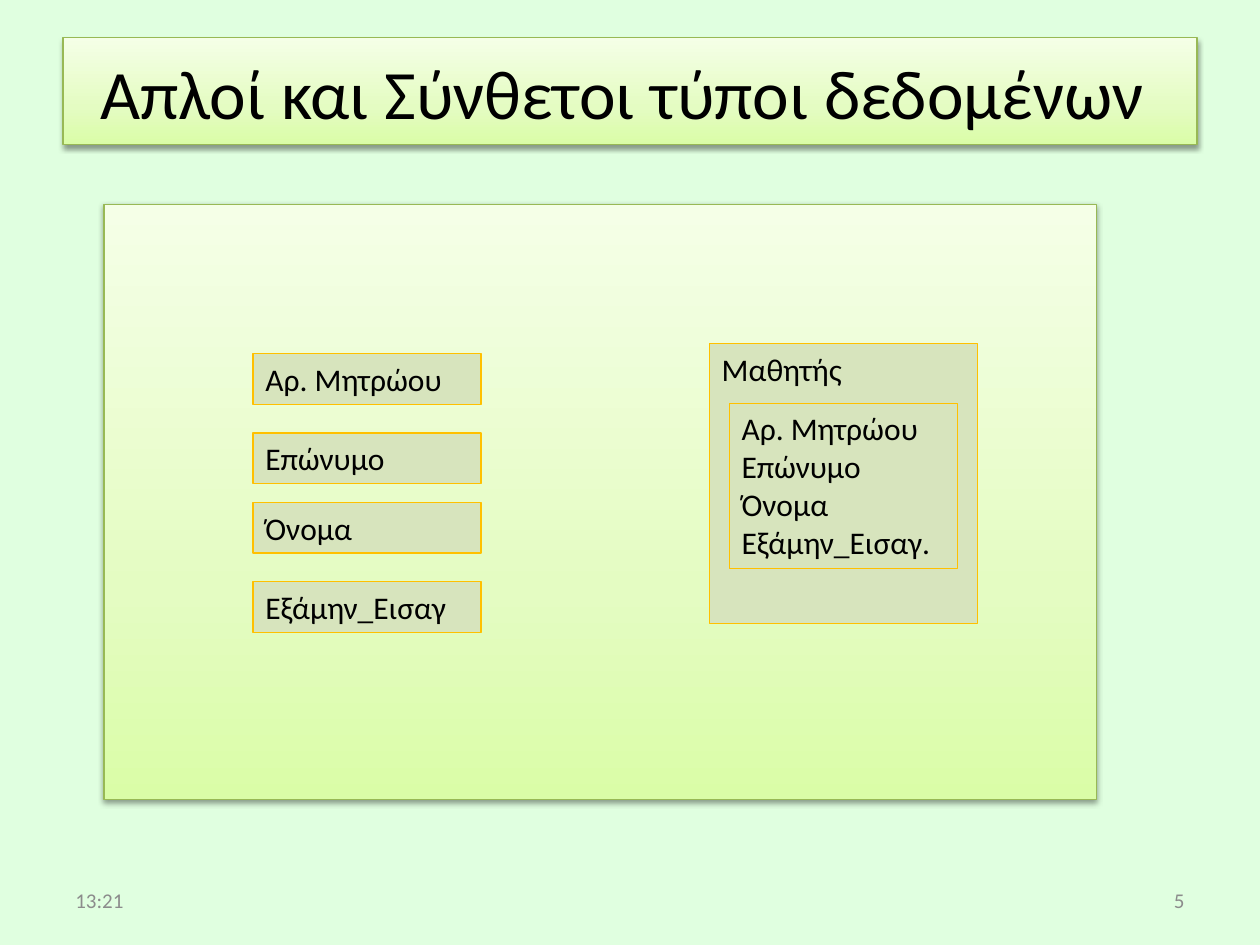
from copy import deepcopy

from pptx import Presentation
from pptx.dml.color import RGBColor
from pptx.enum.shapes import MSO_SHAPE
from pptx.enum.text import MSO_ANCHOR, MSO_AUTO_SIZE, PP_ALIGN
from pptx.oxml import parse_xml
from pptx.oxml.ns import nsdecls, qn
from pptx.util import Cm, Pt

RECTANGLE = MSO_SHAPE.RECTANGLE
TOP, MIDDLE = MSO_ANCHOR.TOP, MSO_ANCHOR.MIDDLE
LEFT, CENTER, RIGHT = PP_ALIGN.LEFT, PP_ALIGN.CENTER, PP_ALIGN.RIGHT
NO_AUTOSIZE = MSO_AUTO_SIZE.NONE
TITLE_ONLY = 5


def color(value):
    return RGBColor.from_string(value)


class SlideBuilder:
    font = "Calibri"
    ink = "000000"
    muted = "8C8C8C"
    background = "E0FFE0"
    field_fill = "D7E4BD"
    field_line = "FFC000"
    panel_line = "98B955"
    panel_stops = [(0, "DAFDA7"), (0.35, "E4FCC2"), (1, "F5FFE7")]

    def __init__(self, deck):
        self.page = deck.slides.add_slide(deck.slide_layouts[TITLE_ONLY])
        fill = self.page.background.fill
        fill.solid()
        fill.fore_color.rgb = color(self.background)

    def set_text(self, box, lines, size, ink, align=LEFT, anchor=TOP):
        frame = box.text_frame
        frame.text = "\n".join(lines)
        frame.word_wrap = True
        frame.auto_size = NO_AUTOSIZE
        frame.vertical_anchor = anchor
        for para in frame.paragraphs:
            para.alignment = align
            para.font.name = self.font
            para.font.size = Pt(size)
            para.font.color.rgb = color(ink)

    def outline(self, box, line):
        box.line.color.rgb = color(line)
        box.line.width = Pt(0.75)

    def decorate_panel(self, box):
        box.fill.gradient()
        box.fill.gradient_angle = 90
        properties = box._element.spPr
        stop_list = properties.find(qn("a:gradFill")).find(qn("a:gsLst"))
        stop_list.append(deepcopy(stop_list[0]))
        for stop, (position, value) in zip(box.fill.gradient_stops, self.panel_stops):
            stop.position = position
            stop.color.rgb = color(value)
        self.outline(box, self.panel_line)
        box.shadow.inherit = False
        properties.find(qn("a:effectLst")).append(parse_xml(
            f'<a:outerShdw {nsdecls("a")} blurRad="40000" dist="20000" dir="5400000" '
            'rotWithShape="0"><a:srgbClr val="000000"><a:alpha val="38000"/>'
            '</a:srgbClr></a:outerShdw>'))

    def title(self, text, left, top, width, height):
        box = self.page.shapes.title
        box.left, box.top, box.width, box.height = map(Cm, (left, top, width, height))
        self.set_text(box, [text], 39.6, self.ink, CENTER, MIDDLE)
        self.decorate_panel(box)

    def rectangle(self, left, top, width, height):
        return self.page.shapes.add_shape(
            RECTANGLE, *map(Cm, (left, top, width, height)))

    def panel(self, *area):
        self.decorate_panel(self.rectangle(*area))

    def field(self, lines, *area):
        box = self.rectangle(*area)
        box.shadow.inherit = False
        box.fill.solid()
        box.fill.fore_color.rgb = color(self.field_fill)
        self.outline(box, self.field_line)
        self.set_text(box, lines, 18, self.ink)

    def footer(self, text, left, align):
        box = self.page.shapes.add_textbox(*map(Cm, (left, 17.65, 5.93, 1.01)))
        self.set_text(box, [text], 12, self.muted, align, MIDDLE)


def main():
    deck = Presentation()
    deck.slide_width, deck.slide_height = Cm(25.4), Cm(19.05)
    builder = SlideBuilder(deck)

    builder.title("Απλοί και Σύνθετοι τύποι δεδομένων ", 1.27, 0.76, 22.86, 2.16)
    builder.footer("13:21", 1.27, LEFT)
    builder.footer("5", 18.2, RIGHT)
    builder.panel(2.1, 4.12, 20, 12)

    names = ["Αρ. Μητρώου", "Επώνυμο", "Όνομα", "Εξάμην_Εισαγ"]
    for name, top in zip(names, [7.13, 8.73, 10.13, 11.73]):
        builder.field([name], 5.1, top, 4.6, 1.02)

    builder.field(["Μαθητής"], 14.3, 6.93, 5.4, 5.64)
    builder.field(names[:-1] + [names[-1] + "."], 14.7, 8.13, 4.6, 3.33)

    deck.save("out.pptx")


if __name__ == "__main__":
    main()
